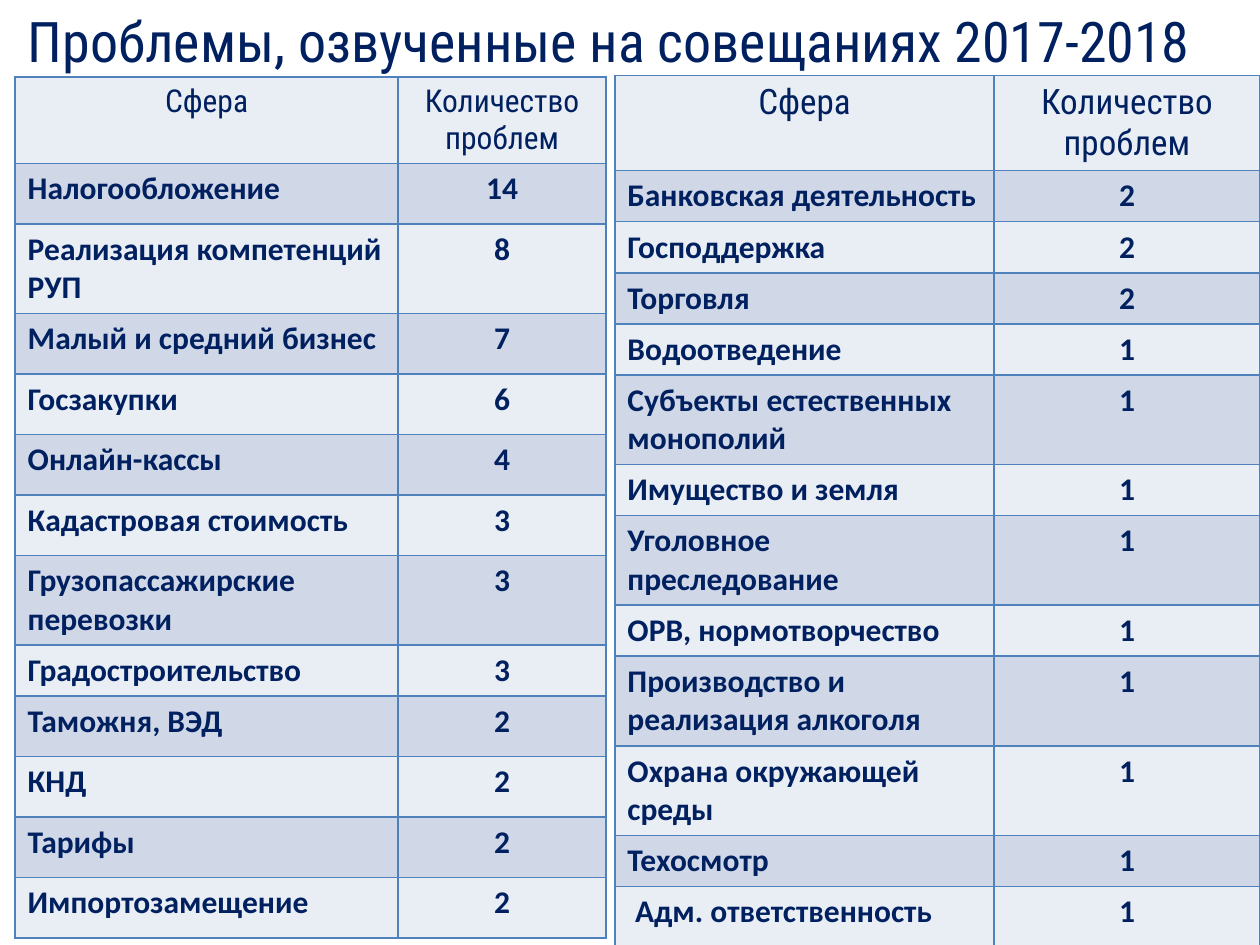
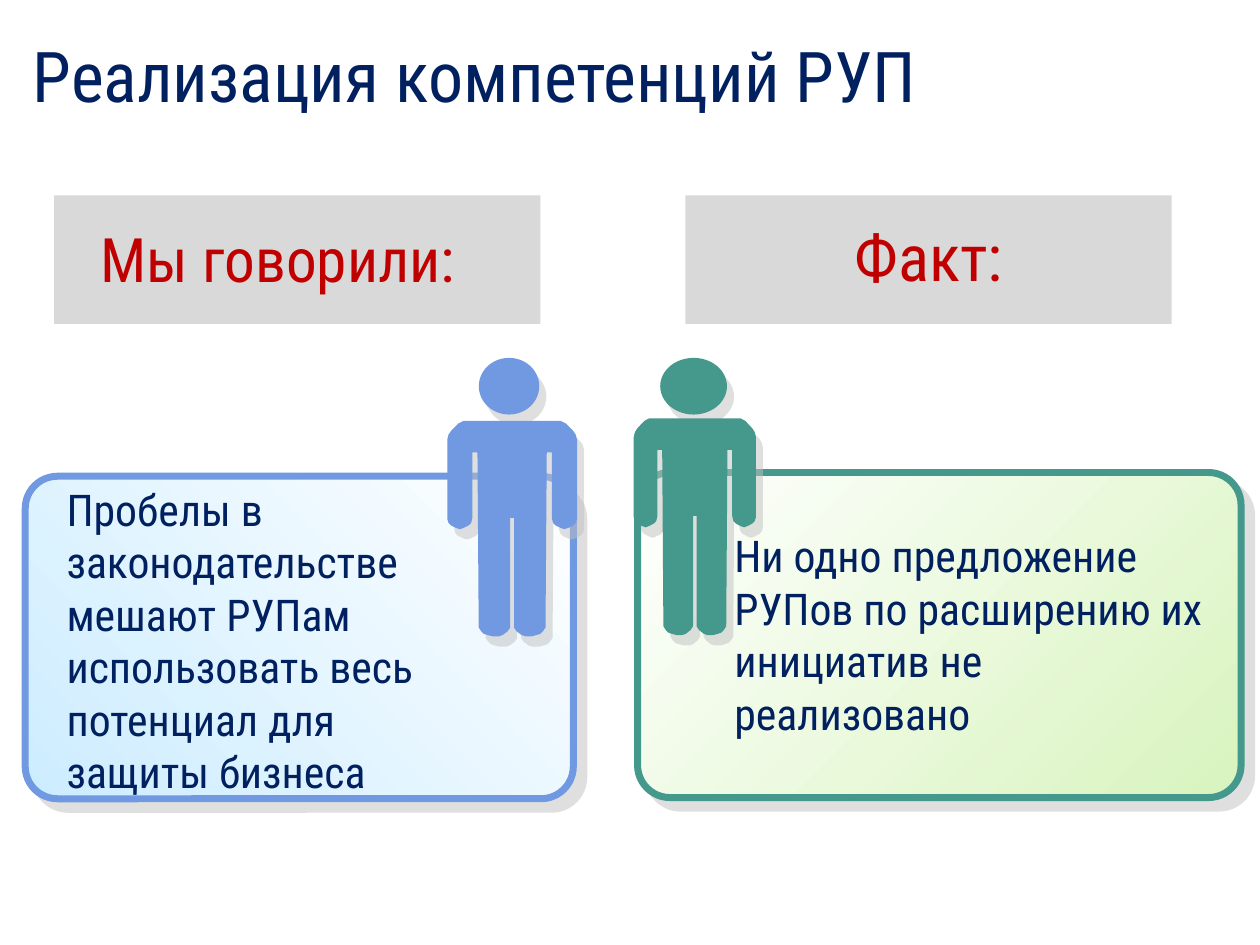
"""Builds two slides on problems raised at meetings and the powers of the RUPs."""
from lxml import etree
from pptx import Presentation
from pptx import util as u
from pptx.dml.color import RGBColor
from pptx.enum import shapes, text
from pptx.oxml.ns import qn

COLORS = {
    "navy": "002060", "red": "C00000", "grid": "4F81BD", "light": "E9EDF4",
    "dark": "D0D8E8", "band": "BFBFBF", "shadow": "C0C0C0", "white": "FFFFFF",
    "blue": "7099E2", "sky": "CCECFF", "teal": "44988C", "lime": "D8F4BE",
}
HEAD_FONT, CELL_FONT = "Roboto Condensed", "Calibri"
LEFT, CENTER = text.PP_ALIGN.LEFT, text.PP_ALIGN.CENTER

HALF_BODY = [(17, 0), (13, 0), (9, 2), (6, 5), (3, 8), (1, 11), (0, 15), (0, 78),
             (1, 81), (3, 83), (7, 85), (10, 86), (13, 85), (17, 83), (19, 81),
             (20, 77), (20, 25), (24, 25), (25, 164), (27, 167), (29, 169),
             (32, 170), (36, 171), (41, 171), (44, 170), (48, 167), (50, 164), (50, 77)]
BODY_W, BODY_H = 103, 171
BODY = HALF_BODY + [(BODY_W - x, y) for x, y in reversed(HALF_BODY)]

LEFT_ROWS = [
    ("Налогообложение", 14), ("Реализация компетенций РУП", 8),
    ("Малый и средний бизнес", 7), ("Госзакупки", 6), ("Онлайн-кассы", 4),
    ("Кадастровая стоимость", 3), ("Грузопассажирские перевозки", 3),
    ("Градостроительство", 3), ("Таможня, ВЭД", 2), ("КНД", 2), ("Тарифы", 2),
    ("Импортозамещение", 2),
]
RIGHT_ROWS = [
    ("Банковская деятельность", 2), ("Господдержка", 2), ("Торговля", 2),
    ("Водоотведение", 1), ("Субъекты естественных монополий", 1),
    ("Имущество и земля", 1), ("Уголовное преследование", 1),
    ("ОРВ, нормотворчество", 1), ("Производство и реализация алкоголя", 1),
    ("Охрана окружающей среды", 1), ("Техосмотр", 1), ("Адм. ответственность", 1),
]


def rgb(name):
    return RGBColor.from_string(COLORS[name])


def inches(values):
    return [u.Inches(v) for v in values]


def add_color(parent, name, alpha=None):
    clr = etree.SubElement(parent, qn("a:srgbClr"), val=COLORS[name])
    if alpha:
        etree.SubElement(clr, qn("a:alpha"), val=str(alpha * 1000))


class Deck:
    def __init__(self):
        self.prs = Presentation()
        self.prs.slide_width, self.prs.slide_height = inches((10, 7.5))
        self.s = None

    def slide(self, title, at, size):
        self.s = self.prs.slides.add_slide(self.prs.slide_layouts[5])
        sp = self.s.shapes.title
        sp.left, sp.top, sp.width, sp.height = inches(at)
        self.fill_text(sp.text_frame, title, size)
        sp.text_frame.auto_size = text.MSO_AUTO_SIZE.NONE

    def fill_text(self, tf, content, size, color="navy", align=LEFT, font=HEAD_FONT, bold=False):
        tf.text = content
        tf.word_wrap = True
        tf.vertical_anchor = text.MSO_ANCHOR.TOP
        p = tf.paragraphs[0]
        p.alignment = align
        f = p.runs[0].font
        f.name, f.size, f.bold = font, u.Pt(size), bold
        f.color.rgb = rgb(color)

    def label(self, content, at, size, color="navy", align=LEFT):
        sp = self.s.shapes.add_textbox(*inches(at))
        self.fill_text(sp.text_frame, content, size, color, align)
        sp.text_frame.auto_size = text.MSO_AUTO_SIZE.SHAPE_TO_FIT_TEXT

    def table(self, rows, at, widths, heights, head_size):
        sp = self.s.shapes.add_table(len(rows) + 1, 2, *inches(at))
        tbl = sp.table
        tbl.first_row = tbl.horz_banding = False
        for col, w in zip(tbl.columns, widths):
            col.width = u.Inches(w)
        for row, h in zip(tbl.rows, heights):
            row.height = u.Inches(h)
        for i, row in enumerate([("Сфера", "Количество проблем")] + rows):
            for j, value in enumerate(row):
                cell = tbl.cell(i, j)
                style = {"font": CELL_FONT, "bold": True} if i else {}
                align = CENTER if j or not i else LEFT
                self.fill_text(cell.text_frame, str(value), 18 if i else head_size,
                               align=align, **style)
                self.border(cell)
                cell.fill.solid()
                cell.fill.fore_color.rgb = rgb("dark" if i % 2 else "light")
        return tbl

    def border(self, cell):
        tc_pr = cell._tc.get_or_add_tcPr()
        for side in ("lnL", "lnR", "lnT", "lnB"):
            ln = etree.SubElement(tc_pr, qn("a:" + side), w=str(u.Pt(1)))
            add_color(etree.SubElement(ln, qn("a:solidFill")), "grid")

    def band(self, at):
        sp = self.s.shapes.add_shape(shapes.MSO_SHAPE.RECTANGLE, *inches(at))
        sp.shadow.inherit = False
        self.paint(sp, "band")
        clr = sp._element.spPr.find(qn("a:solidFill"))[0]
        etree.SubElement(clr, qn("a:alpha"), val="59000")

    def paint(self, sp, color):
        sp.fill.solid()
        sp.fill.fore_color.rgb = rgb(color)
        sp.line.fill.background()

    def cast(self, sp, dist, angle):
        sp.shadow.inherit = False
        effects = sp._element.spPr.find(qn("a:effectLst"))
        shadow = etree.SubElement(effects, qn("a:outerShdw"), dist=str(u.Pt(dist)),
                                  dir=str(angle * 60000), algn="ctr", rotWithShape="0")
        add_color(shadow, "shadow", 50)

    def card(self, group, at, color, stops, angle):
        sp = group.shapes.add_shape(shapes.MSO_SHAPE.ROUNDED_RECTANGLE, *inches(at))
        sp.adjustments[0] = 0.1
        sp.fill.gradient()
        sp.fill.gradient_angle = angle
        for stop, name, pos in zip(sp.fill.gradient_stops, stops, (0, 1)):
            stop.color.rgb = rgb(name)
            stop.position = pos
        sp.line.color.rgb = rgb(color)
        sp.line.width = u.Pt(4)
        self.cast(sp, 8.5, 45)

    def person(self, group, head, body, color):
        oval = group.shapes.add_shape(shapes.MSO_SHAPE.OVAL, *inches(head))
        x, y, w, h = inches(body)
        points = [(x + w * px / BODY_W, y + h * py / BODY_H) for px, py in BODY]
        fb = group.shapes.build_freeform(*points[0])
        fb.add_line_segments(points[1:], close=True)
        for sp in (oval, fb.convert_to_shape()):
            self.paint(sp, color)
            self.cast(sp, 7.2, 56)

    def speaker(self, card, head, body, color, stops, angle):
        group = self.s.shapes.add_group_shape()
        self.card(group, card, color, stops, angle)
        self.person(group, head, body, color)


def main():
    deck = Deck()
    deck.slide("Проблемы, озвученные на совещаниях 2017-2018", (0.12, 0, 9.88, 0.64), 32)
    deck.table(LEFT_ROWS, (0.12, 0.61, 4.69, 6.81), (3.04, 1.65),
               [0.48] * 8 + [0.38] + [0.48] * 4, 18)
    tbl = deck.table(RIGHT_ROWS, (4.88, 0.6, 5.12, 6.85), (3.01, 2.11),
                     [0.57] + [0.36] * 11 + [0.48], 20)
    tbl.cell(len(RIGHT_ROWS), 0).margin_left = u.Inches(0.16)

    deck.slide("Реализация компетенций РУП", (0.16, 0.21, 9.65, 0.77), 40)
    deck.speaker((0.2, 3.78, 4.35, 2.56), (3.8, 2.84, 0.48, 0.45),
                 (3.55, 3.34, 1.03, 1.71), "blue", ("sky", "white"), 45)
    deck.speaker((5.06, 3.75, 4.79, 2.58), (5.24, 2.84, 0.53, 0.45),
                 (5.03, 3.32, 0.97, 1.72), "teal", ("white", "lime"), 315)
    deck.label("Пробелы в законодательстве мешают РУПам использовать весь потенциал "
               "для защиты бизнеса", (0.43, 3.78, 3.42, 2.63), 25)
    deck.label("Ни одно предложение РУПов по расширению их инициатив не реализовано",
               (5.73, 4.15, 4.09, 1.78), 25)
    for left in (0.43, 5.44):
        deck.band((left, 1.55, 3.86, 1.02))
    deck.label("Мы говорили:", (0.7, 1.71, 3.32, 0.69), 35, "red")
    deck.label("Факт:", (5.54, 1.67, 3.66, 0.72), 37, "red", CENTER)
    deck.prs.save("out.pptx")


if __name__ == "__main__":
    main()
